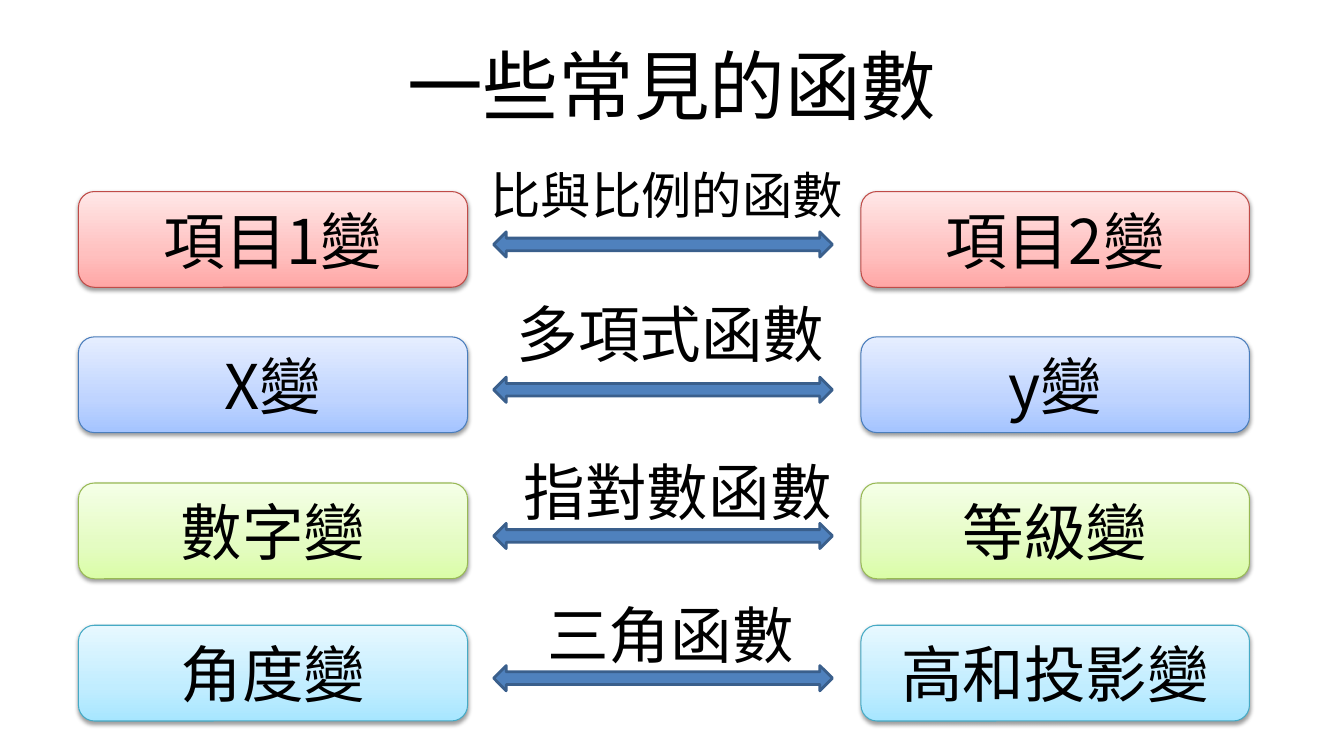
"""Build a slide that pairs changing quantities with the function linking them."""
from pptx import Presentation
from pptx.dml.color import RGBColor
from pptx.enum.shapes import MSO_SHAPE
from pptx.enum.text import MSO_ANCHOR, PP_ALIGN
from pptx.oxml import parse_xml
from pptx.oxml.ns import nsdecls
from pptx.util import Pt

FONT = "Noto Sans CJK SC"
BLACK = RGBColor(0x00, 0x00, 0x00)
ARROW_FILL = RGBColor(0x4F, 0x81, 0xBD)
ARROW_LINE = RGBColor(0x3A, 0x5F, 0x8C)
RED = [RGBColor.from_string(c) for c in ("FFA6A5", "FFC0BF", "FFE7E7", "BF4C48")]
BLUE = [RGBColor.from_string(c) for c in ("A4C4FF", "BFD4FF", "E6EEFF", "4B7EBC")]
GREEN = [RGBColor.from_string(c) for c in ("DAFDA7", "E4FCC2", "F5FFE7", "98B955")]
CYAN = [RGBColor.from_string(c) for c in ("A7E6FF", "C1EDFF", "E7F8FF", "46AAC5")]

BOX_HEIGHT, ARROW_HEIGHT = 68.4, 18
COLUMNS = [(56, 278), (615, 277.5)]
ROWS = [
    (136.8, RED, ("項目1變", "項目2變"), "比與比例的函數", 36, (332.6, 113.8, 287.3, 51.8)),
    (240.6, BLUE, ("X變", "y變"), "多項式函數", 44, (354.2, 208.1, 249.8, 60.5)),
    (345, GREEN, ("數字變", "等級變"), "指對數函數", 44, (359.3, 320.4, 249.8, 60.5)),
    (446.6, CYAN, ("角度變", "高和投影變"), "三角函數", 44, (354.2, 422.6, 249.8, 60.5)),
]


def write(sp, text, size, anchor=MSO_ANCHOR.MIDDLE):
    tf = sp.text_frame
    tf.word_wrap = True
    tf.vertical_anchor = anchor
    p = tf.paragraphs[0]
    p.text = text
    p.alignment = PP_ALIGN.CENTER
    p.font.size = Pt(size)
    p.font.name = FONT
    p.font.color.rgb = BLACK
    latin = p.font._element.find("{*}latin")
    latin.addnext(parse_xml(f'<a:ea {nsdecls("a")} typeface="{FONT}"/>'))


def style_box(sp, colors):
    *shades, edge = colors
    sp.line.color.rgb = edge
    sp.line.width = Pt(0.75)
    stops = "".join(
        f'<a:gs pos="{pos}"><a:srgbClr val="{shade}"/></a:gs>'
        for pos, shade in zip((0, 35000, 100000), shades)
    )
    spPr = sp._element.spPr
    spPr.find("{*}prstGeom").addnext(parse_xml(
        f'<a:gradFill {nsdecls("a")} rotWithShape="1"><a:gsLst>{stops}</a:gsLst>'
        '<a:lin ang="16200000" scaled="1"/></a:gradFill>'
    ))
    sp.shadow.inherit = False
    spPr.find("{*}effectLst").append(parse_xml(
        f'<a:outerShdw {nsdecls("a")} blurRad="{Pt(3.1)}" dist="{Pt(1.6)}" dir="5400000" '
        'rotWithShape="0"><a:srgbClr val="000000"><a:alpha val="38000"/></a:srgbClr></a:outerShdw>'
    ))


prs = Presentation()
prs.slide_width, prs.slide_height = Pt(960), Pt(540)
s = prs.slides.add_slide(prs.slide_layouts[6])

title = s.shapes.add_textbox(Pt(48), Pt(15), Pt(864), Pt(90))
write(title, "一些常見的函數", 54)

for top, colors, items, function, size, label_area in ROWS:
    for (left, width), item in zip(COLUMNS, items):
        box = s.shapes.add_shape(
            MSO_SHAPE.ROUNDED_RECTANGLE, Pt(left), Pt(top), Pt(width), Pt(BOX_HEIGHT)
        )
        style_box(box, colors)
        write(box, item, 44)

    arrow_top = top + (BOX_HEIGHT - ARROW_HEIGHT) / 2 + 3.6
    arrow = s.shapes.add_shape(
        MSO_SHAPE.LEFT_RIGHT_ARROW, Pt(352.6), Pt(arrow_top), Pt(242), Pt(ARROW_HEIGHT)
    )
    arrow.shadow.inherit = False
    arrow.fill.solid()
    arrow.fill.fore_color.rgb = ARROW_FILL
    arrow.line.color.rgb = ARROW_LINE
    arrow.line.width = Pt(2)

    label = s.shapes.add_textbox(*(Pt(v) for v in label_area))
    write(label, function, size, MSO_ANCHOR.TOP)

prs.save("out.pptx")
